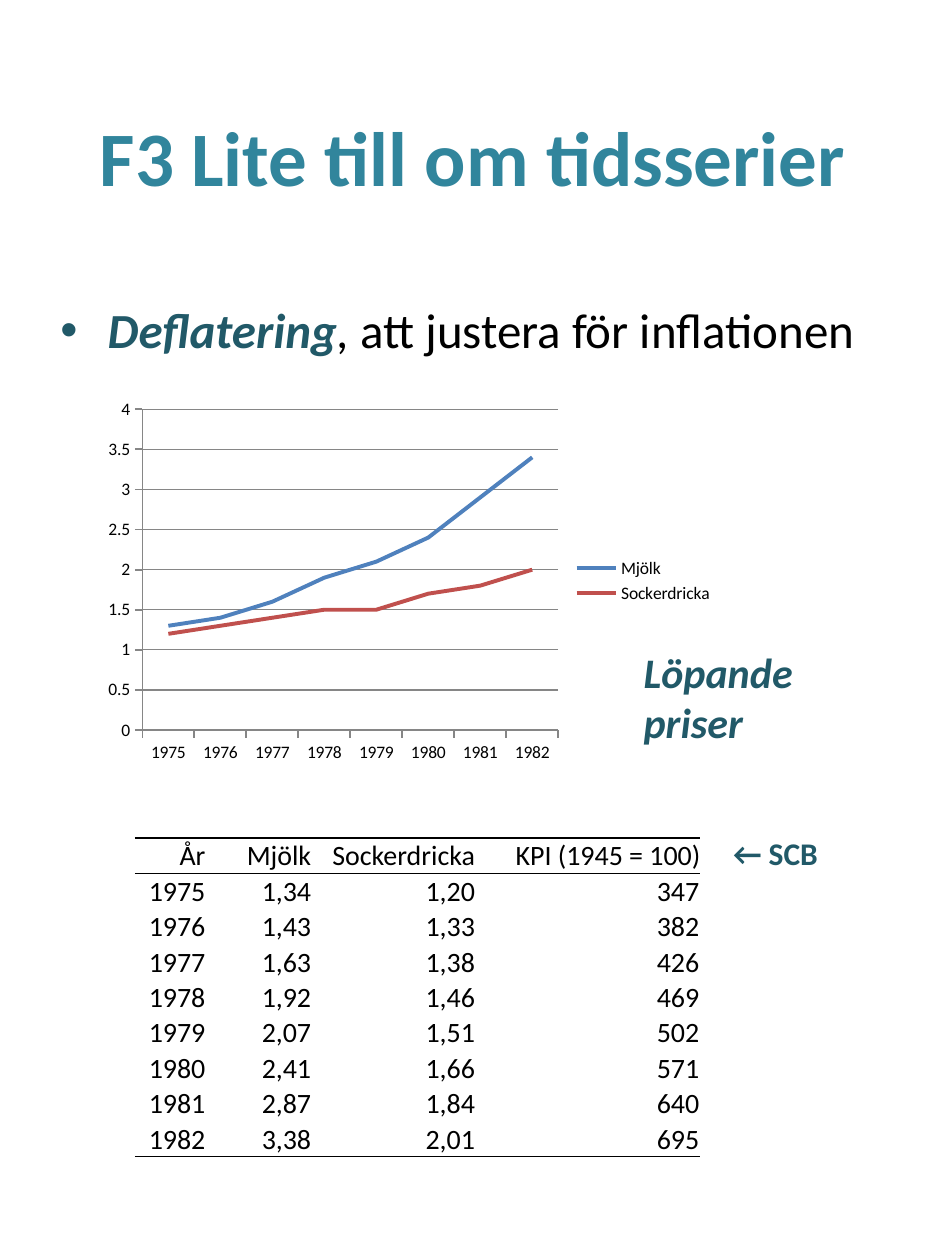
"""Builds a slide on deflating time series, with a price chart and a table."""
from lxml.etree import SubElement
from pptx import Presentation
from pptx.chart.data import CategoryChartData
from pptx.dml.color import RGBColor
from pptx.enum.chart import XL_CHART_TYPE, XL_LEGEND_POSITION, XL_TICK_MARK
from pptx.enum.text import MSO_ANCHOR, PP_ALIGN
from pptx.oxml.ns import qn
from pptx.util import Inches, Pt

FONT = "Calibri"
TEAL = RGBColor(0x31, 0x85, 0x9C)
DARK_TEAL = RGBColor(0x21, 0x59, 0x68)
BLACK = RGBColor(0, 0, 0)
GRAY = RGBColor(0x86, 0x86, 0x86)
SERIES_COLORS = [RGBColor(0x4F, 0x81, 0xBD), RGBColor(0xC0, 0x50, 0x4D)]
NO_STYLE = "{2D5ABB26-0587-4C30-8999-92F81FD0307C}"

TITLE = "F3 Lite till om tidsserier"
TERM, EXPLANATION = "Deflatering", ", att justera för inflationen"
HEADER = ["År", "Mjölk", "Sockerdricka", "KPI (1945 = 100)"]
PRICES = [
    ("1975", "1,34", "1,20", "347"),
    ("1976", "1,43", "1,33", "382"),
    ("1977", "1,63", "1,38", "426"),
    ("1978", "1,92", "1,46", "469"),
    ("1979", "2,07", "1,51", "502"),
    ("1980", "2,41", "1,66", "571"),
    ("1981", "2,87", "1,84", "640"),
    ("1982", "3,38", "2,01", "695"),
]
COL_WIDTHS = [0.56, 0.84, 1.3, 1.79]
TABLE_HEIGHT = 2.53
NOTES = [
    ("Löpande priser", 5.01, 5.08, 24, True),
    ("← SCB", 5.72, 6.57, 18, False),
]


def place(sp, left, top, width, height):
    sp.left, sp.top = Inches(left), Inches(top)
    sp.width, sp.height = Inches(width), Inches(height)


def add_run(p, text, size, color, bold=False, italic=False):
    r = p.add_run()
    r.text = text
    f = r.font
    f.name, f.size, f.bold, f.italic = FONT, Pt(size), bold, italic
    f.color.rgb = color


def add_border(cell, tag):
    ln = SubElement(cell._tc.get_or_add_tcPr(), qn(tag), w=str(Pt(1)))
    fill = SubElement(ln, qn("a:solidFill"))
    SubElement(fill, qn("a:srgbClr"), val=str(BLACK))


def add_price_chart(s):
    data = CategoryChartData()
    data.categories = [row[0] for row in PRICES]
    for col in (1, 2):
        values = [round(float(row[col].replace(",", ".")), 1) for row in PRICES]
        data.add_series(HEADER[col], values)
    chart = s.shapes.add_chart(XL_CHART_TYPE.LINE, Inches(0.76), Inches(3.11),
                               Inches(5), Inches(3), data).chart
    chart.has_title = False
    chart.font.name, chart.font.size = FONT, Pt(10)
    chart.font.color.rgb = BLACK
    chart.has_legend = True
    chart.legend.position = XL_LEGEND_POSITION.RIGHT
    chart.legend.include_in_layout = False
    chart.plots[0].vary_by_categories = False
    for axis in (chart.category_axis, chart.value_axis):
        axis.major_tick_mark = XL_TICK_MARK.OUTSIDE
        axis.format.line.color.rgb = GRAY
        axis.format.line.width = Pt(1)
    value_axis = chart.value_axis
    value_axis.minimum_scale, value_axis.maximum_scale = 0, 4
    value_axis.major_unit = 0.5
    value_axis.has_major_gridlines = True
    value_axis.major_gridlines.format.line.color.rgb = GRAY
    for series, color in zip(chart.plots[0].series, SERIES_COLORS):
        series.smooth = False
        series.format.line.color.rgb = color
        series.format.line.width = Pt(2.25)


def add_price_table(s):
    rows = [HEADER, *PRICES]
    table = s.shapes.add_table(
        len(rows), len(HEADER), Inches(1.07), Inches(6.65),
        Inches(sum(COL_WIDTHS)), Inches(TABLE_HEIGHT)).table
    table.first_row = table.horz_banding = False
    table._tbl.tblPr.find(qn("a:tableStyleId")).text = NO_STYLE
    for column, width in zip(table.columns, COL_WIDTHS):
        column.width = Inches(width)
    for i, row in enumerate(rows):
        for j, text in enumerate(row):
            cell = table.cell(i, j)
            is_index = i > 0 and j == len(HEADER) - 1
            cell.margin_left = cell.margin_top = cell.margin_bottom = 0
            cell.margin_right = Inches(0.01 if is_index else 0)
            cell.vertical_anchor = MSO_ANCHOR.BOTTOM
            if i == 0:
                add_border(cell, "a:lnT")
            if i in (0, len(rows) - 1):
                add_border(cell, "a:lnB")
            cell.fill.background()
            p = cell.text_frame.paragraphs[0]
            p.alignment = PP_ALIGN.RIGHT
            add_run(p, text, 16, BLACK)


def main():
    prs = Presentation()
    prs.slide_width, prs.slide_height = Inches(7.5), Inches(10)
    s = prs.slides.add_slide(prs.slide_layouts[1])
    title, body = s.placeholders
    place(title, 0.38, 0.4, 6.75, 1.67)
    title.text_frame.vertical_anchor = MSO_ANCHOR.MIDDLE
    p = title.text_frame.paragraphs[0]
    p.alignment = PP_ALIGN.CENTER
    add_run(p, TITLE, 44, TEAL, bold=True)

    place(body, 0.38, 2.33, 6.75, 7.16)
    p = body.text_frame.paragraphs[0]
    add_run(p, TERM, 28, DARK_TEAL, bold=True, italic=True)
    add_run(p, EXPLANATION, 28, BLACK)

    add_price_chart(s)
    add_price_table(s)
    for text, left, top, size, italic in NOTES:
        tf = s.shapes.add_textbox(Inches(left), Inches(top),
                                  Inches(1.57), Inches(0.87)).text_frame
        tf.word_wrap = True
        add_run(tf.paragraphs[0], text, size, DARK_TEAL, True, italic)
    prs.save("out.pptx")


if __name__ == "__main__":
    main()
